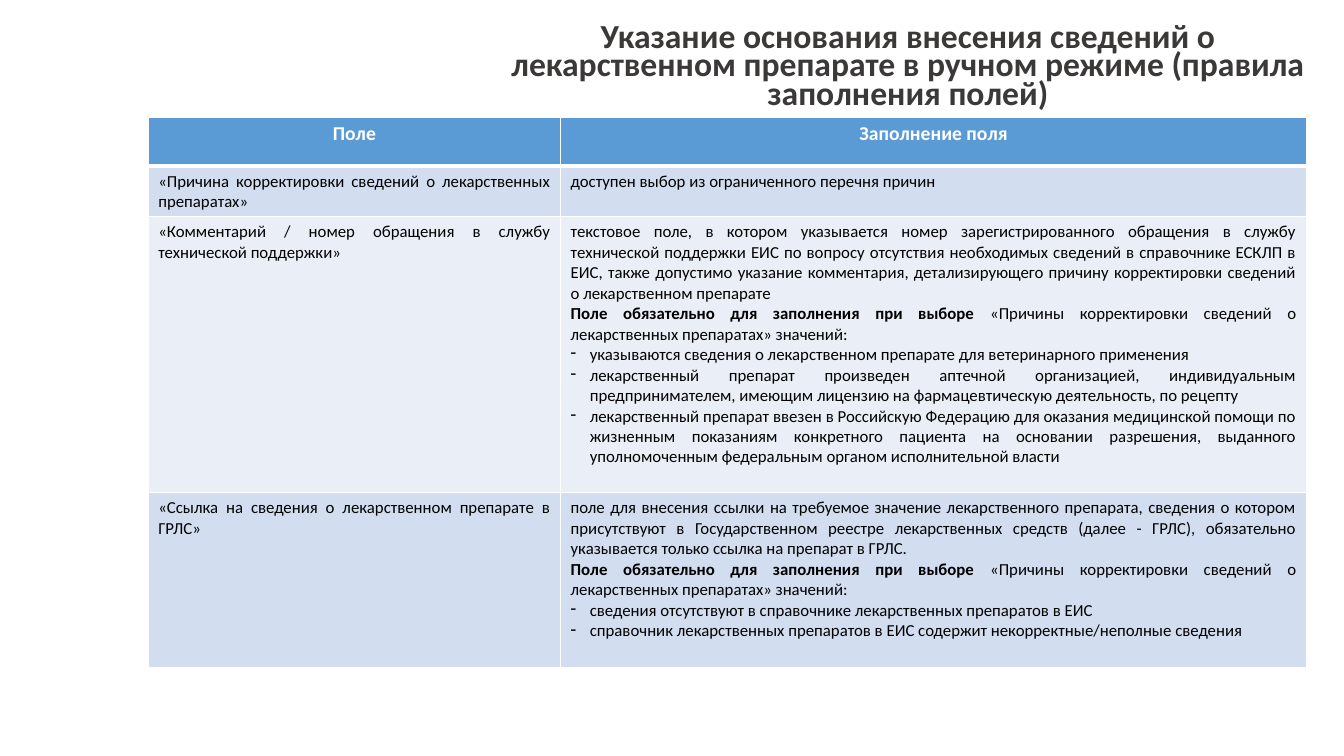
"""Build a slide with the rules for filling in medicine record fields."""
from lxml import etree
from pptx import Presentation
from pptx.dml.color import RGBColor
from pptx.enum.text import MSO_ANCHOR, PP_ALIGN
from pptx.oxml.ns import qn
from pptx.util import Inches, Pt

CENTER, JUSTIFY = PP_ALIGN.CENTER, PP_ALIGN.JUSTIFY
MIDDLE = MSO_ANCHOR.MIDDLE
FONT = "Calibri"
WHITE, BLACK, TITLE_GRAY = "FFFFFF", "000000", "3B3838"
HEADER_BLUE, BANDS = "5B9BD5", ("D2DEEF", "EAEFF7")

TITLE = ("Указание основания внесения сведений о лекарственном препарате "
         "в ручном режиме (правила заполнения полей)")
HEADERS = ("Поле", "Заполнение поля")
REQUIRED = (
    ("Поле обязательно для заполнения при выборе ", True),
    ("«Причины корректировки сведений о лекарственных препаратах» значений:", False),
)
FIELDS = [
    {
        "name": "«Причина корректировки сведений о лекарственных препаратах»",
        "rule": "доступен выбор из ограниченного перечня причин",
        "reasons": [],
    },
    {
        "name": "«Комментарий / номер обращения в службу технической поддержки»",
        "rule": "текстовое поле, в котором указывается номер зарегистрированного "
                "обращения в службу технической поддержки ЕИС по вопросу отсутствия "
                "необходимых сведений в справочнике ЕСКЛП в ЕИС, также допустимо "
                "указание комментария, детализирующего причину корректировки "
                "сведений о лекарственном препарате",
        "reasons": [
            "указываются сведения о лекарственном препарате для ветеринарного применения",
            "лекарственный препарат произведен аптечной организацией, индивидуальным "
            "предпринимателем, имеющим лицензию на фармацевтическую деятельность, "
            "по рецепту",
            "лекарственный препарат ввезен в Российскую Федерацию для оказания "
            "медицинской помощи по жизненным показаниям конкретного пациента на "
            "основании разрешения, выданного уполномоченным федеральным органом "
            "исполнительной власти",
        ],
    },
    {
        "name": "«Ссылка на сведения о лекарственном препарате в ГРЛС»",
        "rule": "поле для внесения ссылки на требуемое значение лекарственного "
                "препарата, сведения о котором присутствуют в Государственном реестре "
                "лекарственных средств (далее - ГРЛС), обязательно указывается только "
                "ссылка на препарат в ГРЛС.",
        "reasons": [
            "сведения отсутствуют в справочнике лекарственных препаратов в ЕИС",
            "справочник лекарственных препаратов в ЕИС содержит "
            "некорректные/неполные сведения",
        ],
    },
]
TITLE_BOX = (4.89, 0.21, 8.23, 0.94)
TABLE_LEFT, TABLE_TOP = 1.47, 1.16
COLUMN_WIDTHS = (4.09, 7.4)
ROW_HEIGHTS = (0.49, 0.5, 2.74, 1.73)
BULLET_INDENT = 0.19


def color(value):
    return RGBColor.from_string(value)


def write_paragraph(frame, index, spans, size, ink, align, bullet=False):
    para = frame.paragraphs[0] if index == 0 else frame.add_paragraph()
    para.alignment = align
    if bullet:
        properties = para._p.get_or_add_pPr()
        properties.set("marL", str(Inches(BULLET_INDENT)))
        properties.set("indent", str(-Inches(BULLET_INDENT)))
        etree.SubElement(properties, qn("a:buChar")).set("char", "-")
    for text, bold in spans:
        span = para.add_run()
        span.text = text
        span.font.name = FONT
        span.font.size = Pt(size)
        span.font.bold = bold
        span.font.color.rgb = color(ink)
    return para


def style_cell(cell, fill, top, bottom):
    properties = cell._tc.get_or_add_tcPr()
    for side, width in (("L", 1), ("R", 1), ("T", top), ("B", bottom)):
        line = etree.SubElement(properties, qn(f"a:ln{side}"), w=str(Pt(width)))
        solid = etree.SubElement(line, qn("a:solidFill"))
        etree.SubElement(solid, qn("a:srgbClr"), val=WHITE)
    cell.fill.solid()
    cell.fill.fore_color.rgb = color(fill)


def add_title(page):
    box = page.shapes.add_textbox(*map(Inches, TITLE_BOX))
    frame = box.text_frame
    frame.word_wrap = True
    frame.vertical_anchor = MIDDLE
    para = write_paragraph(frame, 0, [(TITLE, True)], 24, TITLE_GRAY, CENTER)
    para.line_spacing = 0.7


def add_rules_table(page):
    frame = page.shapes.add_table(
        len(FIELDS) + 1, len(HEADERS), Inches(TABLE_LEFT), Inches(TABLE_TOP),
        Inches(sum(COLUMN_WIDTHS)), Inches(sum(ROW_HEIGHTS)))
    table = frame.table
    table.horz_banding = False
    for column, width in zip(table.columns, COLUMN_WIDTHS):
        column.width = Inches(width)
    for row, height in zip(table.rows, ROW_HEIGHTS):
        row.height = Inches(height)

    for column, header in enumerate(HEADERS):
        cell = table.cell(0, column)
        style_cell(cell, HEADER_BLUE, 1, 3)
        write_paragraph(cell.text_frame, 0, [(header, True)], 14, WHITE, CENTER)

    for row, field in enumerate(FIELDS, start=1):
        rules = [([(field["rule"], False)], False)]
        if field["reasons"]:
            rules.append((REQUIRED, False))
        rules += [([(reason, False)], True) for reason in field["reasons"]]
        contents = ([([(field["name"], False)], False)], rules)
        for column, paragraphs in enumerate(contents):
            cell = table.cell(row, column)
            style_cell(cell, BANDS[(row - 1) % 2], 3 if row == 1 else 1, 1)
            for index, (spans, bullet) in enumerate(paragraphs):
                write_paragraph(cell.text_frame, index, spans, 12, BLACK, JUSTIFY, bullet)


def main():
    deck = Presentation()
    deck.slide_width, deck.slide_height = Inches(13.33), Inches(7.5)
    page = deck.slides.add_slide(deck.slide_layouts[6])
    add_title(page)
    add_rules_table(page)
    deck.save("out.pptx")


if __name__ == "__main__":
    main()
